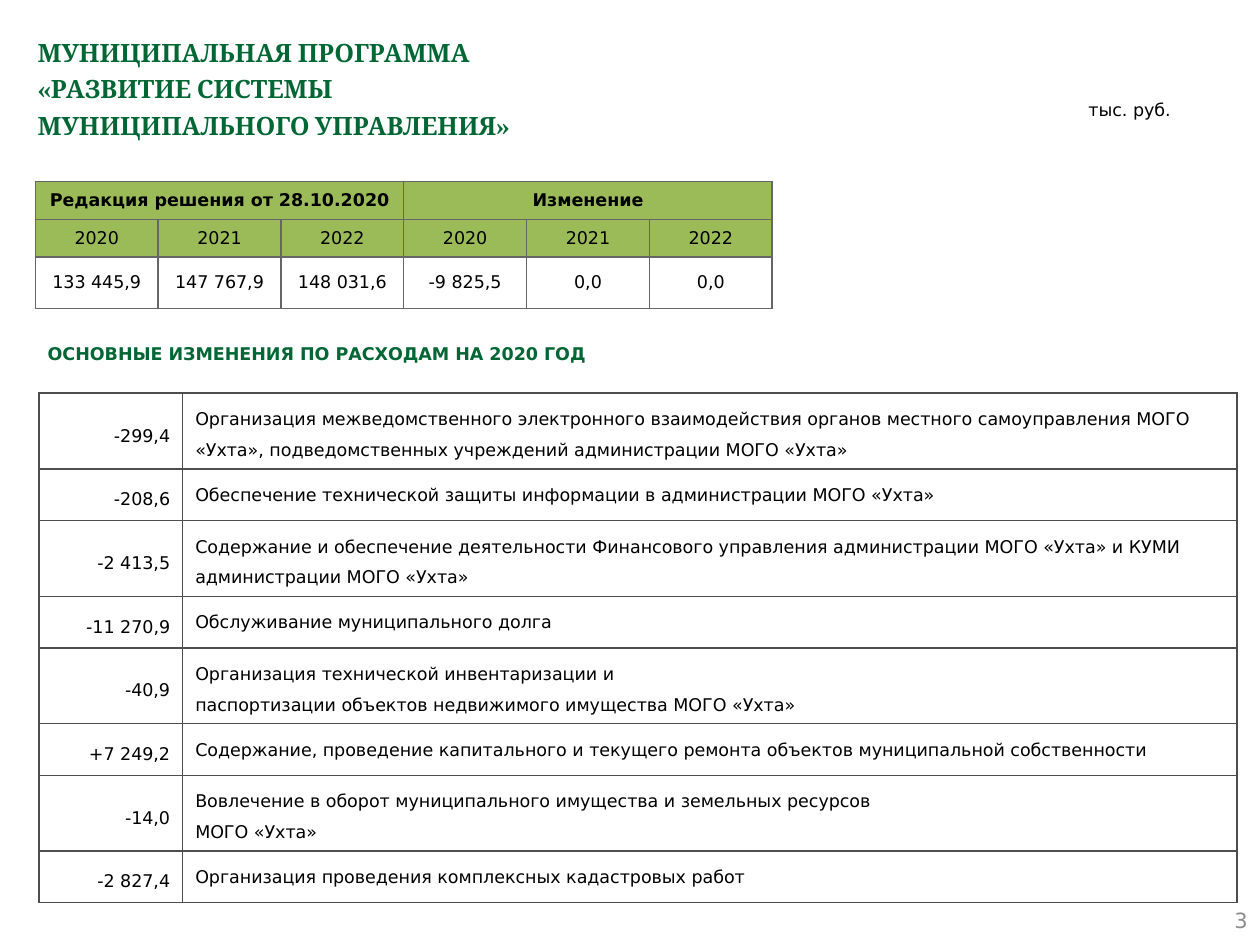
from lxml import etree
from pptx import Presentation
from pptx.dml.color import RGBColor
from pptx.enum.shapes import MSO_SHAPE as Shape
from pptx.enum.text import MSO_ANCHOR as Anchor, PP_ALIGN as Align
from pptx.oxml import parse_xml
from pptx.oxml.ns import nsdecls
from pptx.util import Inches, Pt

GREEN, BLACK, HEADER = "006633", "000000", "9BBB59"
SANS = "DejaVu Sans"


def write(frame, text, size=10, font=SANS, color=BLACK, bold=False,
          align=Align.LEFT, spacing=1.0, after=0):
    frame.word_wrap = True
    frame.text = text
    for para in frame.paragraphs:
        para.alignment = align
        para.line_spacing = spacing
        para.space_after = Pt(after)
        for span in para.runs:
            span.font.size = Pt(size)
            span.font.name = font
            span.font.bold = bold
            span.font.color.rgb = RGBColor.from_string(color)


def style_cell(cell, border, fill=None):
    if fill:
        cell.fill.solid()
        cell.fill.fore_color.rgb = RGBColor.from_string(fill)
    else:
        cell.fill.background()
    props = cell._tc.get_or_add_tcPr()
    for index, side in enumerate(("lnL", "lnR", "lnT", "lnB")):
        props.insert(index, parse_xml(
            f'<a:{side} {nsdecls("a")} w="12700"><a:solidFill>'
            f'<a:srgbClr val="{border}"/></a:solidFill></a:{side}>'))


deck = Presentation()
deck.slide_width, deck.slide_height = Inches(10), Inches(7.5)
page = deck.slides.add_slide(deck.slide_layouts[6])

# Title
title = page.shapes.add_textbox(Inches(0.2), Inches(0.2), Inches(9.61), Inches(0.79))
write(title.text_frame,
      "МУНИЦИПАЛЬНАЯ ПРОГРАММА\v«РАЗВИТИЕ СИСТЕМЫ\vМУНИЦИПАЛЬНОГО УПРАВЛЕНИЯ»",
      size=14.4, font="Cambria", color=GREEN, bold=True, spacing=1.2)

# Page number
number = page.shapes.add_textbox(Inches(7.67), Inches(7.1), Inches(2.33), Inches(0.4))
number.text_frame.vertical_anchor = Anchor.MIDDLE
write(number.text_frame, "3", size=12, color="8C8C8C", align=Align.RIGHT)

# Section heading
heading = page.shapes.add_shape(Shape.PENTAGON, Inches(0.28), Inches(2.59),
                                Inches(5.32), Inches(0.43))
heading.adjustments[0] = 0
heading.shadow.inherit = False
heading.fill.background()
heading.line.fill.background()
heading.text_frame.vertical_anchor = Anchor.MIDDLE
write(heading.text_frame, "ОСНОВНЫЕ ИЗМЕНЕНИЯ ПО РАСХОДАМ НА 2020 ГОД",
      color=GREEN, bold=True)

# Expense changes: amount and purpose
changes = [
    ("-299,4", "Организация межведомственного электронного взаимодействия органов местного "
               "самоуправления МОГО «Ухта», подведомственных учреждений администрации МОГО «Ухта»"),
    ("-208,6", "Обеспечение технической защиты информации в администрации МОГО «Ухта»"),
    ("-2 413,5", "Содержание и обеспечение деятельности Финансового управления администрации "
                 "МОГО «Ухта» и КУМИ администрации МОГО «Ухта»"),
    ("-11 270,9", "Обслуживание муниципального долга"),
    ("-40,9", "Организация технической инвентаризации и\n"
              "паспортизации объектов недвижимого имущества МОГО «Ухта»"),
    ("+7 249,2", "Содержание, проведение капитального и текущего ремонта объектов "
                 "муниципальной собственности"),
    ("-14,0", "Вовлечение в оборот муниципального имущества и земельных ресурсов\nМОГО «Ухта»"),
    ("-2 827,4", "Организация проведения комплексных кадастровых работ"),
]
table = page.shapes.add_table(len(changes), 2, Inches(0.31), Inches(3.12),
                              Inches(9.51), Inches(0.41 * len(changes))).table
table.first_row = table.horz_banding = False
table.columns[0].width, table.columns[1].width = Inches(1.14), Inches(8.37)
for row, (amount, purpose) in zip(table.rows, changes):
    row.height = Inches(0.41)
    amount_cell, purpose_cell = row.cells
    amount_cell.vertical_anchor = Anchor.MIDDLE
    write(amount_cell.text_frame, amount, align=Align.RIGHT, spacing=1.5, after=10)
    write(purpose_cell.text_frame, purpose, spacing=1.5)
    for cell in row.cells:
        style_cell(cell, "4D4D4D")

# Unit of measure
unit = page.shapes.add_textbox(Inches(8.54), Inches(0.7), Inches(1.01), Inches(0.3))
write(unit.text_frame, "тыс. руб.", spacing=1.2)

# Budget totals by year
totals = [
    ["Редакция решения от 28.10.2020", "", "", "Изменение", "", ""],
    ["2020", "2021", "2022"] * 2,
    ["133 445,9", "147 767,9", "148 031,6", "-9 825,5", "0,0", "0,0"],
]
table = page.shapes.add_table(3, 6, Inches(0.28), Inches(1.44),
                              Inches(5.85), Inches(1)).table
table.first_row = table.horz_banding = False
for column in table.columns:
    column.width = Inches(5.85 / 6)
for row, height in zip(table.rows, (0.3, 0.3, 0.41)):
    row.height = Inches(height)
for first in (0, 3):
    table.cell(0, first).merge(table.cell(0, first + 2))
for r, values in enumerate(totals):
    for c, value in enumerate(values):
        cell = table.cell(r, c)
        style_cell(cell, "666666", HEADER if r < 2 else None)
        cell.vertical_anchor = Anchor.MIDDLE
        cell.margin_left = cell.margin_right = Inches(0.05)
        cell.margin_top = cell.margin_bottom = Inches(0.05)
        if value:
            write(cell.text_frame, value, bold=r == 0, align=Align.CENTER)

deck.save("out.pptx")
